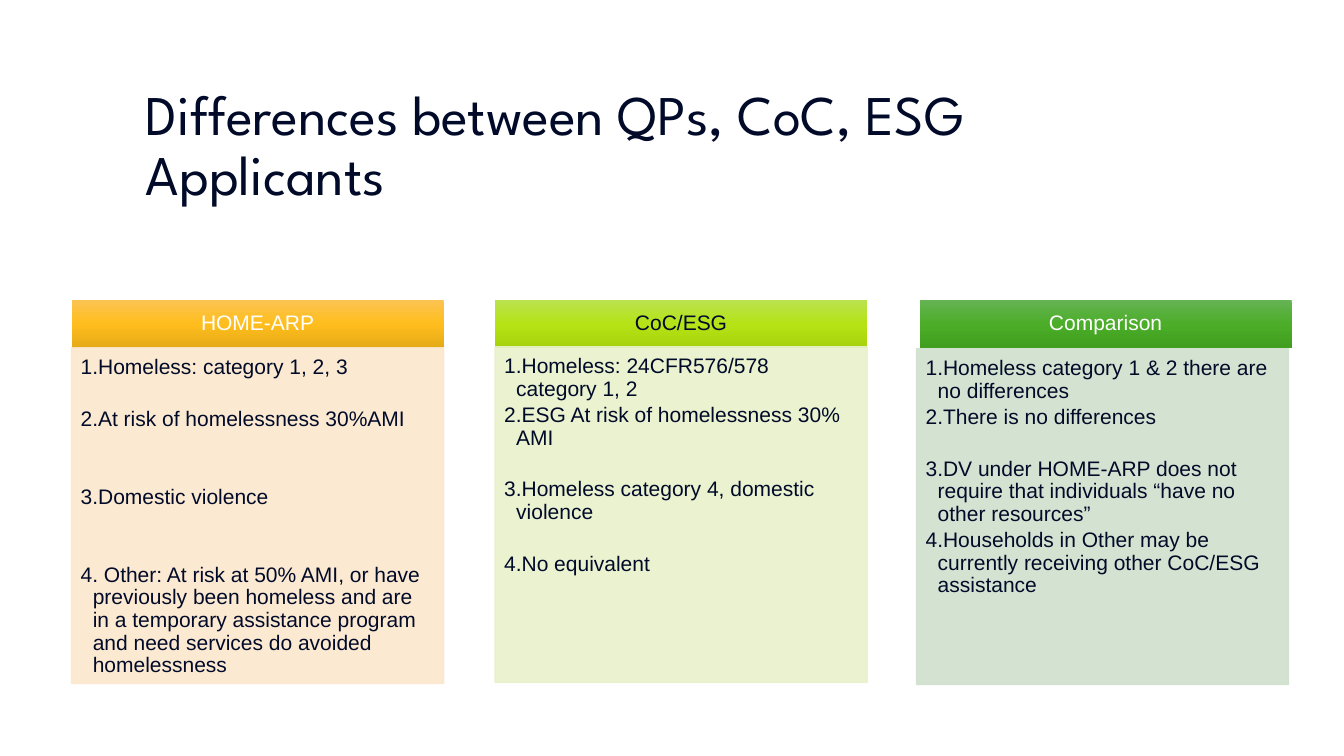
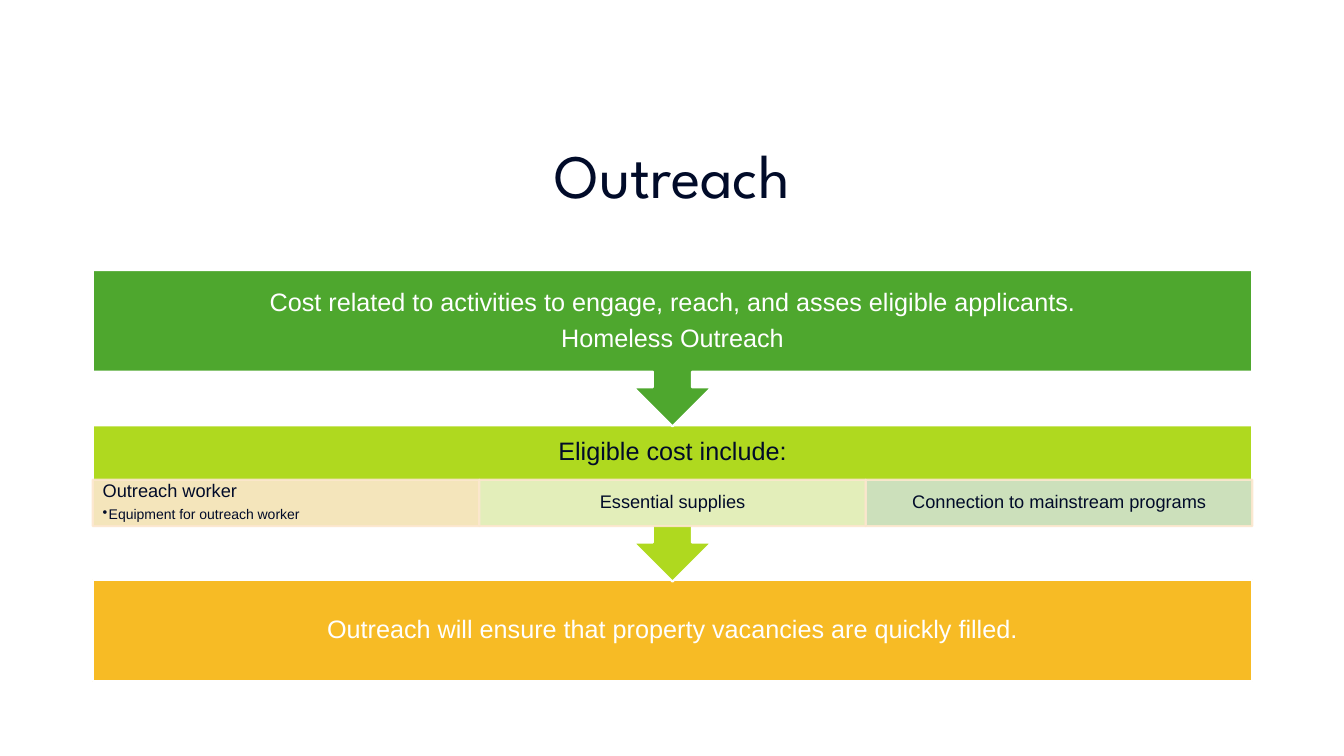
from dataclasses import dataclass

from lxml import etree
from pptx import Presentation
from pptx import util as u
from pptx.dml import color
from pptx.enum import shapes, text
from pptx.oxml import ns

COLORS = {
    "ink": "010B29",
    "white": "FFFFFF",
    "green": "4EA72E",
    "lime": "AFD91F",
    "amber": "F7BB25",
    "peach": "FCE7CD",
    "pale_lime": "E9F1CB",
    "pale_green": "D0E1CD",
}
TITLE_FONT = "League Spartan"
BODY_FONT = "Arial"
LINE_SPACING = 0.9
BLANK_LINE = 18.5
COLUMN_WIDTH = 3.69
BAND_LEFT, BAND_WIDTH = 0.92, 11.5
CELL_WIDTH = BAND_WIDTH / 3
BAND_INSETS = (0.14, 0.14, 0.14, 0.14)
CELL_INSETS = (0.1, 0.02, 0.1, 0.02)


@dataclass(frozen=True)
class Box:
    left: float
    top: float
    width: float
    height: float

    def lengths(self) -> tuple:
        return tuple(u.Inches(v) for v in (self.left, self.top, self.width, self.height))


@dataclass(frozen=True)
class Line:
    text: str
    size: float
    ink: str = "ink"
    centered: bool = True
    after: float = 0
    bullet: str = ""
    indent: float = 0
    font: str = BODY_FONT


@dataclass(frozen=True)
class Column:
    heading: str
    heading_ink: str
    gradient: tuple[str, str, str]
    tint: str
    heading_left: float
    body_left: float
    body_top: float
    items: tuple[tuple[str, int], ...]


@dataclass(frozen=True)
class Band:
    kind: int
    box: Box
    fill: str
    lines: tuple[Line, ...]
    insets: tuple[float, float, float, float] = BAND_INSETS


@dataclass(frozen=True)
class Cell:
    tint: str
    lines: tuple[Line, ...]


COLUMNS = (
    Column("HOME-ARP", "white", ("FBC352", "FFBE1D", "E5AA17"), "peach", 0.71, 0.71, 3.45, (
        ("Homeless: category 1, 2, 3", 1),
        ("At risk of homelessness 30%AMI", 2),
        ("Domestic violence", 2),
        (" Other: At risk at 50% AMI, or have previously been homeless and are in a "
         "temporary assistance program and need services do avoided homelessness", 0),
    )),
    Column("CoC/ESG", "ink", ("BAE24E", "B5E316", "A5D20B"), "pale_lime", 4.91, 4.91, 3.44, (
        ("Homeless: 24CFR576/578 category 1, 2", 0),
        ("ESG At risk of homelessness 30% AMI", 1),
        ("Homeless category 4, domestic violence", 1),
        ("No equivalent", 0),
    )),
    Column("Comparison", "white", ("66B354", "4BAD28", "409F1E"), "pale_green", 9.12, 9.09, 3.46, (
        ("Homeless category 1 & 2 there are no differences", 0),
        ("There is no differences", 1),
        ("DV under HOME-ARP does not require that individuals “have no other resources”", 0),
        ("Households in Other may be currently receiving other CoC/ESG assistance", 0),
    )),
)

CALLOUT = shapes.MSO_SHAPE.DOWN_ARROW_CALLOUT
BANDS = (
    Band(shapes.MSO_SHAPE.RECTANGLE, Box(BAND_LEFT, 5.75, BAND_WIDTH, 1.01), "amber", (
        Line("Outreach will ensure that property vacancies are quickly filled.", 18, "white", after=6.3),
    )),
    Band(CALLOUT, Box(BAND_LEFT, 4.22, BAND_WIDTH, 1.55), "lime", (
        Line("Eligible cost include:", 18, after=6.3),
    ), (0.14, 0.14, 0.14, 0.61)),
    Band(CALLOUT, Box(BAND_LEFT, 2.68, BAND_WIDTH, 1.55), "green", (
        Line("Cost related to activities to engage, reach, and asses eligible applicants.",
             18, "white", after=6.3),
        Line("Homeless Outreach", 18, "white", after=6.3),
    )),
)
CELLS = (
    Cell("peach", (
        Line("Outreach worker", 13, centered=False, after=4.55),
        Line("Equipment for outreach worker", 10, centered=False, after=1.5, bullet="•", indent=0.06),
    )),
    Cell("pale_lime", (Line("Essential supplies", 13, after=4.55),)),
    Cell("pale_green", (Line("Connection to mainstream programs", 13, after=4.55),)),
)


def rgb(value: str) -> color.RGBColor:
    return color.RGBColor.from_string(COLORS.get(value, value))


def add_bullet(paragraph, line: Line) -> None:
    properties = paragraph._p.get_or_add_pPr()
    properties.set("marL", str(u.Inches(line.indent)))
    properties.set("indent", str(-u.Inches(line.indent)))
    if line.bullet == "number":
        etree.SubElement(properties, ns.qn("a:buAutoNum"), type="arabicPeriod")
    else:
        etree.SubElement(properties, ns.qn("a:buChar"), char=line.bullet)


def write(shape, lines: tuple[Line, ...], insets=(0.1, 0.05, 0.1, 0.05), middle: bool = True) -> None:
    frame = shape.text_frame
    frame.word_wrap = True
    frame.auto_size = text.MSO_AUTO_SIZE.NONE
    frame.vertical_anchor = text.MSO_ANCHOR.MIDDLE if middle else text.MSO_ANCHOR.TOP
    frame.margin_left, frame.margin_top, frame.margin_right, frame.margin_bottom = map(u.Inches, insets)
    frame.text = "\n".join(line.text for line in lines)
    for paragraph, line in zip(frame.paragraphs, lines):
        if line.bullet:
            add_bullet(paragraph, line)
        paragraph.alignment = text.PP_ALIGN.CENTER if line.centered else text.PP_ALIGN.LEFT
        paragraph.line_spacing = LINE_SPACING
        paragraph.space_after = u.Pt(line.after)
        for run in paragraph.runs:
            run.font.name = line.font
            run.font.size = u.Pt(line.size)
            run.font.color.rgb = rgb(line.ink)


def add_title(slide, box: Box, title: str, size: float, centered: bool) -> None:
    shape = slide.shapes.add_textbox(*box.lengths())
    write(shape, (Line(title, size, centered=centered, font=TITLE_FONT),))


def add_panel(slide, box: Box, fill: str, outline: str, width: float,
              kind: int = shapes.MSO_SHAPE.RECTANGLE, opacity: int = 100):
    shape = slide.shapes.add_shape(kind, *box.lengths())
    shape.shadow.inherit = False
    shape.fill.solid()
    shape.fill.fore_color.rgb = rgb(fill)
    shape.line.color.rgb = rgb(outline)
    shape.line.width = u.Pt(width)
    if opacity < 100:
        for value in shape._element.spPr.iter(ns.qn("a:srgbClr")):
            etree.SubElement(value, ns.qn("a:alpha"), val=str(opacity * 1000))
    return shape


def add_heading(slide, box: Box, stops: tuple[str, str, str]):
    shape = slide.shapes.add_shape(shapes.MSO_SHAPE.RECTANGLE, *box.lengths())
    shape.shadow.inherit = False
    shape.line.fill.background()
    shape.fill.gradient()
    shape.fill.gradient_angle = 270
    stop_list = shape._element.spPr.find(ns.qn("a:gradFill")).find(ns.qn("a:gsLst"))
    for old_stop in list(stop_list):
        stop_list.remove(old_stop)
    for position, stop in zip((0, 50000, 100000), stops):
        entry = etree.SubElement(stop_list, ns.qn("a:gs"), pos=str(position))
        etree.SubElement(entry, ns.qn("a:srgbClr"), val=stop)
    return shape


def add_column(slide, column: Column) -> None:
    heading = add_heading(slide, Box(column.heading_left, 2.98, COLUMN_WIDTH, 0.47), column.gradient)
    write(heading, (Line(column.heading, 15, column.heading_ink, after=5.25),), (0.12, 0.07, 0.12, 0.07))
    body = add_panel(slide, Box(column.body_left, column.body_top, COLUMN_WIDTH, 3.33),
                     column.tint, column.tint, 1, opacity=90)
    lines = tuple(
        Line(item, 15, centered=False, after=2.25 + blanks * BLANK_LINE, bullet="number", indent=0.12)
        for item, blanks in column.items
    )
    write(body, lines, (0.09, 0.09, 0.12, 0.13), middle=False)


def add_band(slide, band: Band) -> None:
    shape = add_panel(slide, band.box, band.fill, "white", 1.5, band.kind)
    write(shape, band.lines, band.insets)


def add_cell(slide, index: int, cell: Cell) -> None:
    box = Box(BAND_LEFT + index * CELL_WIDTH, 4.76, CELL_WIDTH, 0.46)
    shape = add_panel(slide, box, cell.tint, "peach", 1.5, opacity=90)
    write(shape, cell.lines, CELL_INSETS, middle=cell.lines[0].centered)


def build_differences(slide) -> None:
    add_title(slide, Box(1.35, 0.6, 10.63, 1.72), "Differences between QPs, CoC, ESG Applicants", 40, False)
    for column in COLUMNS:
        add_column(slide, column)


def build_outreach(slide) -> None:
    add_title(slide, Box(BAND_LEFT, 1.05, BAND_WIDTH, 1.45), "Outreach", 44, True)
    for band in BANDS:
        add_band(slide, band)
    for index, cell in enumerate(CELLS):
        add_cell(slide, index, cell)


def main() -> None:
    presentation = Presentation()
    presentation.slide_width = u.Inches(13.33)
    presentation.slide_height = u.Inches(7.5)
    for build in (build_differences, build_outreach):
        build(presentation.slides.add_slide(presentation.slide_layouts[6]))
    presentation.save("out.pptx")


if __name__ == "__main__":
    main()
